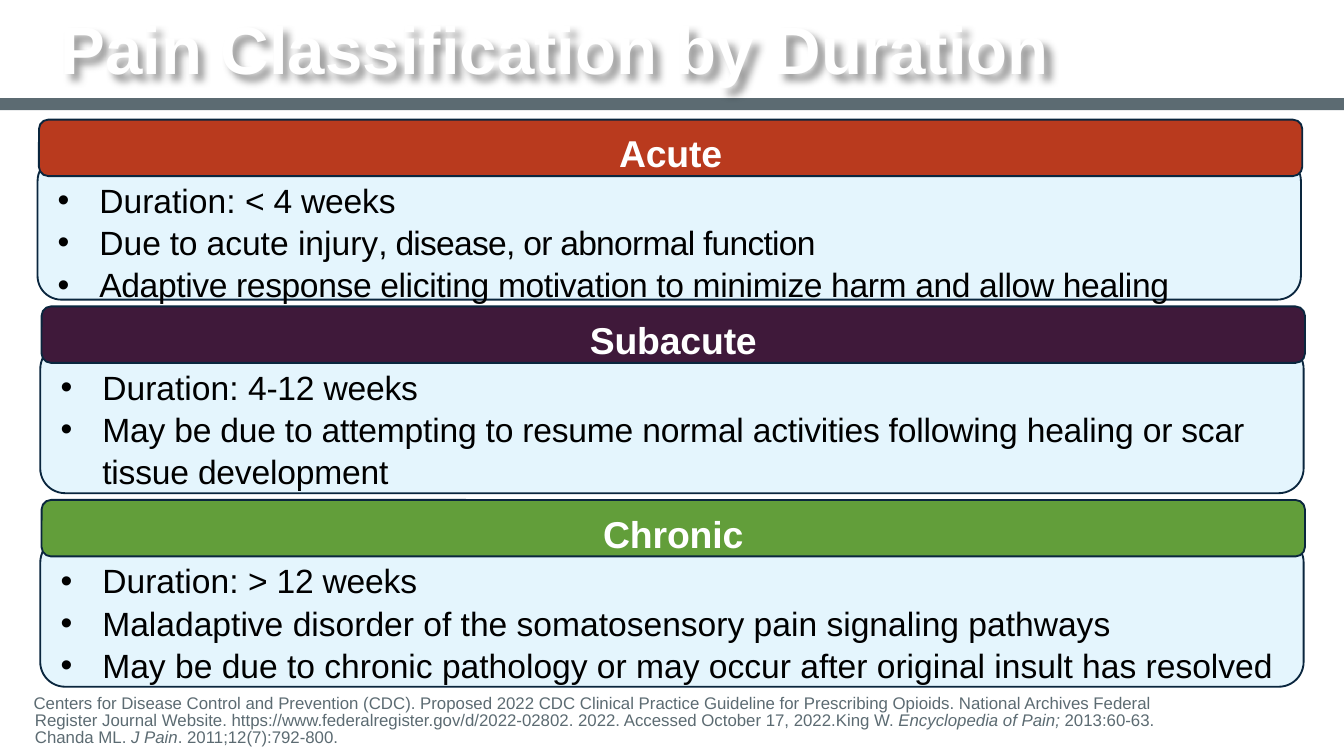
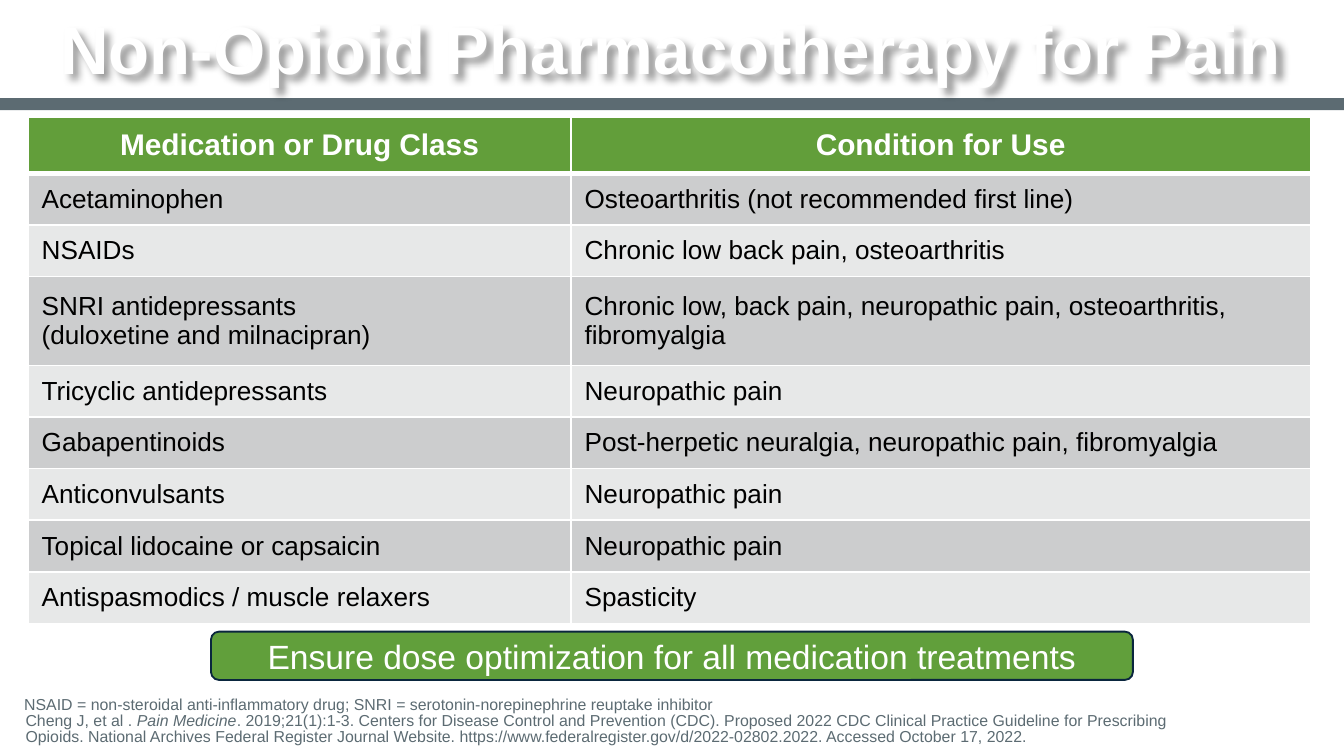
from lxml import etree
from pptx import Presentation
from pptx.dml.color import RGBColor
from pptx.enum import shapes, text
from pptx.oxml import ns
from pptx.util import Inches, Pt

COLORS = {
    "white": "FFFFFF", "black": "000000", "slate": "5C6B72", "navy": "0A263E",
    "ice": "E4F5FD", "rust": "B93A1E", "plum": "3F193A", "green": "629E3A",
    "callout": "619F3B", "row_dark": "CCCDCE", "row_light": "E7E8E8",
}
FONT = "Arial"
COLUMNS, ROWS = 100, 56.25
WIDTH, HEIGHT = Inches(10), Inches(5.625)


def rgb(name):
    return RGBColor.from_string(COLORS[name])


def sub(parent, tag, **attrs):
    child = etree.SubElement(parent, ns.qn(tag))
    for key, value in attrs.items():
        child.set(key, str(value))
    return child


def write(tf, paragraphs, size=18, color="black", bold=False, align=None,
          spacing=None, indent=0, bullet=None, spc=None):
    """Fill a frame; a paragraph is a list of strings or (string, options)."""
    for i, parts in enumerate(paragraphs):
        p = tf.paragraphs[0] if i == 0 else tf.add_paragraph()
        if indent:
            pPr = p._p.get_or_add_pPr()
            pPr.set("marL", str(Inches(indent)))
            pPr.set("indent", str(-Inches(indent)))
            if bullet:
                sub(pPr, "a:buFont", typeface=FONT)
                sub(pPr, "a:buChar", char=bullet)
        if align:
            p.alignment = align
        if spacing:
            p.line_spacing = spacing
        for part in [parts] if isinstance(parts, str) else parts:
            words, options = (part, {}) if isinstance(part, str) else part
            for n, line in enumerate(words.split("\n")):
                if n:
                    p.add_line_break()
                r = p.add_run()
                r.text = line
                r.font.name, r.font.size, r.font.bold = FONT, Pt(size), bold
                r.font.italic = options.get("italic", False)
                r.font.color.rgb = rgb(color)
                tracking = options.get("spc", spc)
                if tracking:
                    r._r.get_or_add_rPr().set("spc", str(round(tracking * 100)))


class Deck:
    def __init__(self):
        self.prs = Presentation()
        self.prs.slide_width, self.prs.slide_height = WIDTH, HEIGHT
        self.s = None

    def grid(self, x, y, w, h):
        """Turn grid columns and rows into lengths."""
        col, row = WIDTH / COLUMNS, HEIGHT / ROWS
        return [round(n) for n in (x * col, y * row, w * col, h * row)]

    def slide(self, title, title_box, sources, sources_box, sources_size):
        self.s = self.prs.slides.add_slide(self.prs.slide_layouts[6])
        self.shape("RECTANGLE", (0, 7.3, 100, 0.9), "slate")
        self.title(title, title_box)
        tf = self.textbox(sources_box, text.MSO_ANCHOR.BOTTOM, (0.25, 0, 0, 0.13))
        write(tf, [sources], size=sources_size, color="slate", spacing=0.85, indent=0.01)

    def frame(self, sp, anchor, insets):
        tf = sp.text_frame
        tf.word_wrap, tf.vertical_anchor = True, anchor
        (tf.margin_left, tf.margin_top,
         tf.margin_right, tf.margin_bottom) = map(Inches, insets)
        return tf

    def textbox(self, box, anchor, insets):
        sp = self.s.shapes.add_textbox(*self.grid(*box))
        return self.frame(sp, anchor, insets)

    def title(self, words, box):
        sp = self.s.shapes.add_textbox(*self.grid(*box))
        tf = self.frame(sp, text.MSO_ANCHOR.MIDDLE, (0, 0.05, 0, 0.05))
        write(tf, [words], size=36, color="white", bold=True, spacing=0.85)
        # Soft shadow that sets the white letters off
        effects = sub(sp._element.spPr, "a:effectLst")
        shadow = sub(effects, "a:outerShdw", blurRad=Pt(4), dist=Pt(4),
                     dir=2700000, algn="tl", rotWithShape=0)
        tint = sub(shadow, "a:srgbClr", val=COLORS["black"])
        sub(tint, "a:alpha", val=40000)

    def shape(self, kind, box, fill, line=None):
        sp = self.s.shapes.add_shape(getattr(shapes.MSO_SHAPE, kind), *self.grid(*box))
        sp.shadow.inherit = False
        sp.fill.solid()
        sp.fill.fore_color.rgb = rgb(fill)
        if line:
            sp.line.color.rgb, sp.line.width = rgb(line), Pt(1)
        else:
            sp.line.fill.background()
        return sp

    def label(self, words, box, fill, anchor, top=0.05, **fmt):
        sp = self.shape("ROUNDED_RECTANGLE", box, fill, "navy")
        tf = self.frame(sp, anchor, (0.1, top, 0.1, 0.05))
        write(tf, [words], color="white", align=text.PP_ALIGN.CENTER, **fmt)

    def card(self, heading, fill, points, x, y, h):
        body = self.shape("ROUNDED_RECTANGLE", (x, y + 2.8, 94, h), "ice", "navy")
        tf = self.frame(body, text.MSO_ANCHOR.TOP, (0.1, 0.1, 0.1, 0))
        write(tf, points, align=text.PP_ALIGN.LEFT, spacing=1.05, indent=0.31, bullet="•")
        self.label(heading, (x + 0.1, y, 94, 4.2), fill, text.MSO_ANCHOR.TOP,
                   top=0.06, size=20, bold=True, spc=-0.1)

    def borders(self, cell, **widths):
        tcPr = cell._tc.get_or_add_tcPr()
        for i, side in enumerate("LRTB"):
            ln = sub(tcPr, f"a:ln{side}", w=Pt(widths.get(side, 1)))
            sub(sub(ln, "a:solidFill"), "a:srgbClr", val=COLORS["white"])
            tcPr.insert(i, ln)

    def table(self, rows, box, col_widths, row_heights):
        frame = self.s.shapes.add_table(len(rows), len(col_widths), *self.grid(*box))
        table = frame.table
        table.horz_banding = False
        for col, w in zip(table.columns, col_widths):
            col.width = self.grid(0, 0, w, 0)[2]
        for i, (row, h) in enumerate(zip(rows, row_heights)):
            table.rows[i].height = self.grid(0, 0, 0, h)[3]
            for j, words in enumerate(row):
                cell = table.cell(i, j)
                cell.vertical_anchor = text.MSO_ANCHOR.MIDDLE
                cell.fill.solid()
                if i == 0:
                    fill = "green"
                    fmt = dict(size=16, color="white", bold=True, align=text.PP_ALIGN.CENTER)
                else:
                    fill = "row_dark" if i % 2 else "row_light"
                    fmt = dict(size=14)
                cell.fill.fore_color.rgb = rgb(fill)
                write(cell.text_frame, words.split("\n"), **fmt)
                self.borders(cell, B=3 if i == 0 else 1, T=3 if i == 1 else 1)


def duration_slide(deck):
    deck.slide(
        "Pain Classification by Duration", (4.5, 0.9, 93.5, 6.2),
        ["Centers for Disease Control and Prevention (CDC). Proposed 2022 CDC Clinical "
         "Practice Guideline for Prescribing Opioids. National Archives Federal Register "
         "Journal Website. https://www.federalregister.gov/d/2022-02802. 2022. "
         "Accessed October 17, 2022.King W. ",
         ("Encyclopedia of Pain; ", {"italic": True}), "2013:60-63. Chanda ML. ",
         ("J Pain", {"italic": True}), ". 2011;12(7):792-800."],
        (0, 51.7, 88.2, 5.2), 9)

    # One card per pain duration
    deck.card("Acute", "rust", [
        ["Duration: ", ("< 4 weeks", {"spc": -0.1})],
        ["Due", (" to ", {"spc": -0.2}), "acute injury",
         (", disease, or abnormal function", {"spc": -0.4})],
        [("Adaptive response eliciting motivation to minimize harm and allow healing",
          {"spc": -0.2})],
    ], 2.8, 8.9, 10.6)
    deck.card("Subacute", "plum", [
        ["Duration: ", ("4-12 weeks", {"spc": -0.1})],
        [("May be due to attempting to resume normal activities following healing "
          "or scar tissue development", {"spc": -0.1})],
    ], 3, 22.8, 11.1)
    deck.card("Chronic", "green", [
        ["Duration: ", ("> 12 weeks", {"spc": -0.1})],
        "Maladaptive disorder of the somatosensory pain signaling pathways",
        "May be due to chronic pathology or may occur after original insult has resolved",
    ], 3, 37.2, 11.1)


def medication_slide(deck):
    deck.slide(
        "Non-Opioid Pharmacotherapy for Pain", (4.5, 1.2, 93.5, 5.6),
        ["NSAID = non-steroidal anti-inflammatory drug; SNRI = serotonin-norepinephrine "
         "reuptake inhibitor\nCheng J, et al . ", ("Pain Medicine", {"italic": True}),
         ". 2019;21(1):1-3. Centers for Disease Control and Prevention (CDC). Proposed "
         "2022 CDC Clinical Practice Guideline for Prescribing Opioids. National Archives "
         "Federal Register Journal Website. https://www.federalregister.gov/d/"
         "2022-02802.2022. Accessed October 17, 2022."],
        (-0.7, 51.8, 88.2, 5), 8.5)

    # Medications and their uses
    rows = [
        ("Medication or Drug Class", "Condition for Use"),
        ("Acetaminophen", "Osteoarthritis (not recommended first line)"),
        ("NSAIDs", "Chronic low back pain, osteoarthritis"),
        ("SNRI antidepressants\n(duloxetine and milnacipran)",
         "Chronic low, back pain, neuropathic pain, osteoarthritis, fibromyalgia"),
        ("Tricyclic antidepressants", "Neuropathic pain"),
        ("Gabapentinoids", "Post-herpetic neuralgia, neuropathic pain, fibromyalgia"),
        ("Anticonvulsants", "Neuropathic pain"),
        ("Topical lidocaine or capsaicin", "Neuropathic pain"),
        ("Antispasmodics / muscle relaxers", "Spasticity"),
    ]
    total, header, double = 37.7, 4.2, 6.6
    single = (total - header - double) / (len(rows) - 2)
    heights = [header] + [double if "\n" in row[0] else single for row in rows[1:]]
    deck.table(rows, (2.1, 8.7, 95.4, total), (40.4, 55), heights)

    # Takeaway
    deck.label("Ensure dose optimization for all medication treatments",
               (15.7, 47, 68.6, 3.6), "callout", text.MSO_ANCHOR.MIDDLE)


def main():
    deck = Deck()
    duration_slide(deck)
    medication_slide(deck)
    deck.prs.save("out.pptx")


if __name__ == "__main__":
    main()
